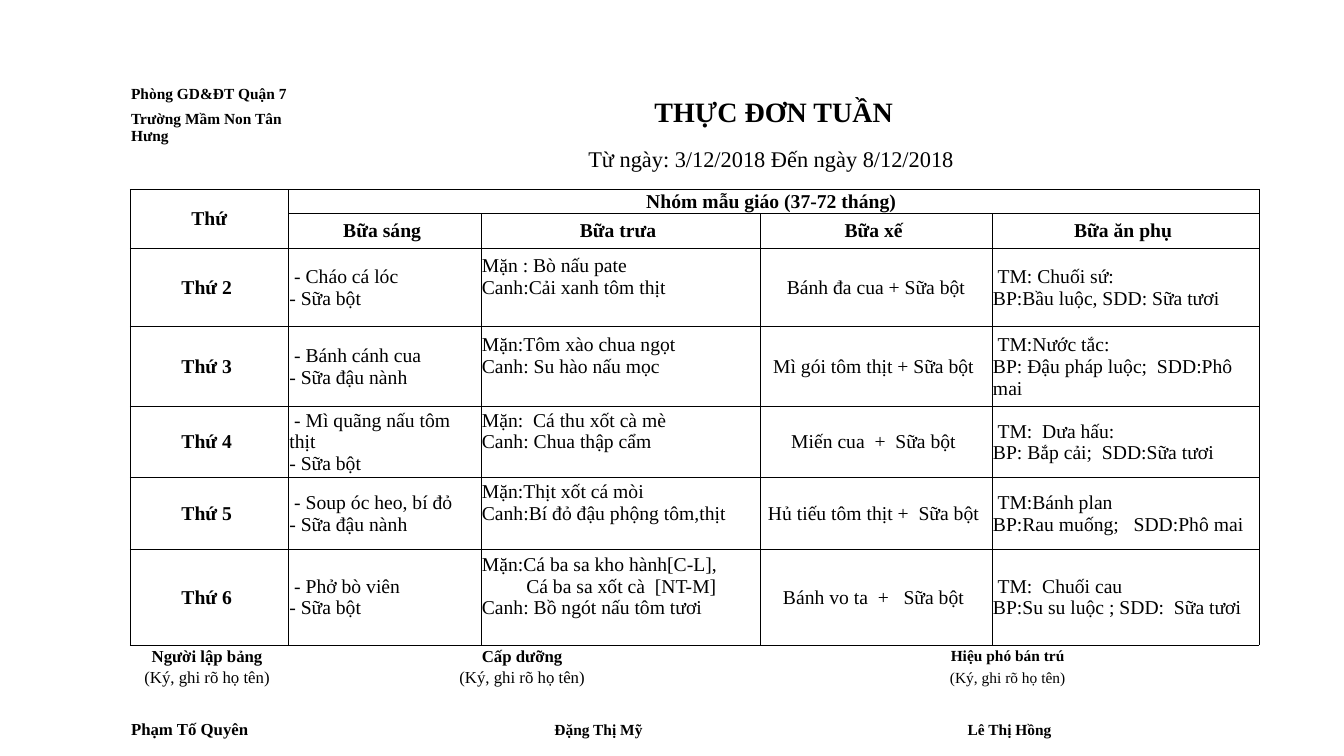
from lxml.etree import SubElement
from pptx import Presentation
from pptx.dml.color import RGBColor
from pptx.enum.text import MSO_ANCHOR as ANCHOR, PP_ALIGN as ALIGN
from pptx.oxml.ns import qn
from pptx.util import Inches, Pt

COLORS = {"ink": "000000"}
FONT = "Times New Roman"
COL_WIDTHS = [1.57, 1.91, 0.72, 2.05, 1.73, 0.57, 1.32, 1.33]
ROW_HEIGHTS = [0.29, 0.37, 0.26, 0.17, 0.24, 0.34, 0.78, 0.79,
               0.71, 0.71, 0.95, 0.22, 0.21, 0.31, 0.2]
GRID_TOP, GRID_BOTTOM = 4, 10
MEAL_COLS = [0, 1, 2, 4, 6]

HEADERS = ["Bữa sáng ", "Bữa trưa ", "Bữa xế ", "Bữa ăn phụ "]
MENU = [
    ["Thứ 2 ", " - Cháo cá lóc\n- Sữa bột",
     "Mặn : Bò nấu pate\vCanh:Cải xanh tôm thịt",
     " Bánh đa cua + Sữa bột ",
     " TM: Chuối sứ:\vBP:Bầu luộc, SDD: Sữa tươi"],
    ["Thứ 3 ", " - Bánh cánh cua\n- Sữa đậu nành",
     "Mặn:Tôm xào chua ngọt\vCanh: Su hào nấu mọc",
     "Mì gói tôm thịt + Sữa bột ",
     " TM:Nước tắc:\vBP: Đậu pháp luộc;  SDD:Phô mai"],
    ["Thứ 4 ", " - Mì quãng nấu tôm thịt\n- Sữa bột",
     "Mặn:  Cá thu xốt cà mè\vCanh: Chua thập cẩm",
     "Miến cua  +  Sữa bột ",
     " TM:  Dưa hấu:\vBP: Bắp cải;  SDD:Sữa tươi"],
    ["Thứ 5 ", " - Soup óc heo, bí đỏ\n- Sữa đậu nành",
     "Mặn:Thịt xốt cá mòi\vCanh:Bí đỏ đậu phộng tôm,thịt",
     "Hủ tiếu tôm thịt +  Sữa bột ",
     " TM:Bánh plan\vBP:Rau muống;   SDD:Phô mai"],
    ["Thứ 6 ", " - Phở bò viên\n- Sữa bột",
     "Mặn:Cá ba sa kho hành[C-L],\nCá ba sa xốt cà  [NT-M]\nCanh: Bồ ngót nấu tôm tươi",
     "Bánh vo ta  +   Sữa bột ",
     " TM:  Chuối cau\vBP:Su su luộc ; SDD:  Sữa tươi"],
]
SIGNERS = [(0, "Người lập bảng ", 12), (1, "Cấp dưỡng ", 12), (4, "Hiệu phó bán trú ", 11)]


def write(cell, text, size, bold=False, align=ALIGN.CENTER):
    cell.text_frame.text = text
    for p in cell.text_frame.paragraphs:
        p.alignment = align
        for r in p.runs:
            r.font.name = FONT
            r.font.size = Pt(size)
            r.font.bold = bold
            r.font.color.rgb = RGBColor.from_string(COLORS["ink"])


def add_border(cell, side, visible):
    ln = SubElement(cell._tc.get_or_add_tcPr(), qn(f"a:ln{side}"), w=str(Pt(0.5)))
    if visible:
        fill = SubElement(ln, qn("a:solidFill"))
        SubElement(fill, qn("a:srgbClr"), val=COLORS["ink"])
    else:
        SubElement(ln, qn("a:noFill"))


prs = Presentation()
prs.slide_width, prs.slide_height = Inches(13.33), Inches(7.5)
slide = prs.slides.add_slide(prs.slide_layouts[6])

frame = slide.shapes.add_table(len(ROW_HEIGHTS), len(COL_WIDTHS), Inches(1.29),
                               Inches(0.79), Inches(11.19), Inches(6.55))
table = frame.table
table.first_row = False
table.horz_banding = False
for column, width in zip(table.columns, COL_WIDTHS):
    column.width = Inches(width)
for row, height in zip(table.rows, ROW_HEIGHTS):
    row.height = Inches(height)

for i in range(len(ROW_HEIGHTS)):
    in_grid = GRID_TOP <= i <= GRID_BOTTOM
    borders = {"L": in_grid, "R": in_grid,
               "T": in_grid or i == GRID_BOTTOM + 1,
               "B": in_grid or i == GRID_TOP - 1}
    for j in range(len(COL_WIDTHS)):
        cell = table.cell(i, j)
        for side, visible in borders.items():
            add_border(cell, side, visible)
        cell.fill.background()
        cell.vertical_anchor = ANCHOR.MIDDLE
        cell.margin_left = cell.margin_right = cell.margin_top = Inches(0.01)
        cell.margin_bottom = 0
        p = cell.text_frame.paragraphs[0]
        SubElement(p._p, qn("a:endParaRPr"), sz="800")

merges = [(0, 1, 1, 7), (2, 1, 2, 7), (4, 0, 5, 0), (4, 1, 4, 7),
          (13, 1, 13, 2), (13, 4, 13, 6), (14, 1, 14, 2), (14, 4, 14, 7)]
merges += [(3, j, 3, j + 1) for j in (1, 3, 5)]
merges += [(i, j, i, j + 1) for i in range(5, 11) for j in (2, 4, 6)]
merges += [(i, a, i, b) for i in (11, 12) for a, b in ((1, 3), (4, 7))]
for top, left, bottom, right in merges:
    table.cell(top, left).merge(table.cell(bottom, right))

write(table.cell(0, 0), "Phòng GD&ĐT Quận 7", 11, True, ALIGN.LEFT)
write(table.cell(1, 0), "Trường Mầm Non Tân Hưng", 11, True, ALIGN.LEFT)
write(table.cell(0, 1), "THỰC ĐƠN TUẦN", 20, True)
write(table.cell(2, 1), "Từ ngày: 3/12/2018 Đến ngày 8/12/2018 ", 16)
write(table.cell(4, 0), "Thứ", 14, True)
write(table.cell(4, 1), "Nhóm mẫu giáo (37-72 tháng) ", 14, True)
for j, header in zip(MEAL_COLS[1:], HEADERS):
    write(table.cell(5, j), header, 14, True)

for i, day in enumerate(MENU, start=6):
    for j, text in zip(MEAL_COLS, day):
        align = ALIGN.CENTER if j in (0, 4) else ALIGN.LEFT
        write(table.cell(i, j), text, 14, j == 0, align)
    table.cell(i, 2).margin_bottom = Inches(0.22)
second_dish = table.cell(10, 2).text_frame.paragraphs[1]
second_dish._p.get_or_add_pPr().set("marL", str(Inches(0.44)))

for j, role, size in SIGNERS:
    write(table.cell(11, j), role, size, True)
    write(table.cell(12, j), "(Ký, ghi rõ họ tên) ", size)
write(table.cell(14, 0), "Phạm Tố Quyên", 12, True, ALIGN.LEFT)
table.cell(14, 0).vertical_anchor = ANCHOR.BOTTOM
write(table.cell(14, 3), "Đặng Thị Mỹ", 11, True, ALIGN.LEFT)
write(table.cell(14, 4), "Lê Thị Hồng", 11, True)

prs.save("out.pptx")
